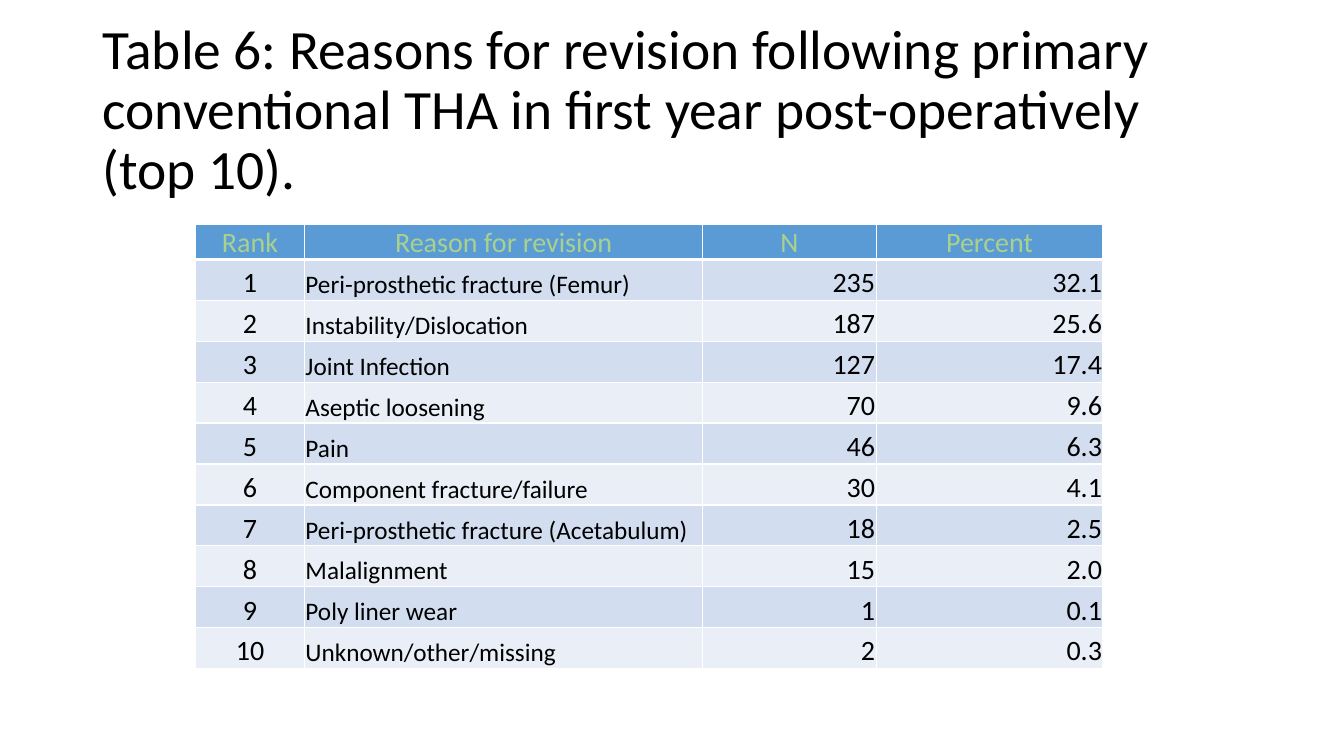
import pptx
import pptx.util
import pptx.dml.color
import pptx.enum.text
import pptx.oxml
import pptx.oxml.ns

Inches, Pt = pptx.util.Inches, pptx.util.Pt
ALIGN, ANCHOR = pptx.enum.text.PP_ALIGN, pptx.enum.text.MSO_ANCHOR

TITLE = ("Table 6: Reasons for revision following primary conventional THA "
         "in first year post-operatively (top 10).")
HEADER = ("Rank", "Reason for revision", "N", "Percent")
REASONS = [
    ("Peri-prosthetic fracture (Femur)", "235", "32.1"),
    ("Instability/Dislocation", "187", "25.6"),
    ("Joint Infection", "127", "17.4"),
    ("Aseptic loosening", "70", "9.6"),
    ("Pain", "46", "6.3"),
    ("Component fracture/failure", "30", "4.1"),
    ("Peri-prosthetic fracture (Acetabulum)", "18", "2.5"),
    ("Malalignment", "15", "2.0"),
    ("Poly liner wear", "1", "0.1"),
    ("Unknown/other/missing", "2", "0.3"),
]
COLUMNS = [
    (1.08, ALIGN.CENTER, "cell"),
    (3.95, ALIGN.LEFT, "reason"),
    (1.72, ALIGN.RIGHT, "cell"),
    (2.25, ALIGN.RIGHT, "cell"),
]
HEADER_HEIGHT, ROW_HEIGHT = 0.34, 0.406
THEME = {
    "font": "Calibri",
    "size": {"title": 39.6, "cell": 20, "reason": 18},
    "text": "000000",
    "header_text": "A9D18E",
    "header_fill": "5B9BD5",
    "bands": ("D2DEEF", "EAEFF7"),
    "border": "FFFFFF",
}


def rgb(value):
    return pptx.dml.color.RGBColor.from_string(value)


def write(tf, text, *, size="cell", color=THEME["text"], align=ALIGN.LEFT, spacing=None):
    p = tf.paragraphs[0]
    p.alignment = align
    p.line_spacing = spacing
    r = p.add_run()
    r.text = text
    r.font.name = THEME["font"]
    r.font.size = Pt(THEME["size"][size])
    r.font.color.rgb = rgb(color)


def set_borders(cell, bottom):
    tc_pr = cell._tc.get_or_add_tcPr()
    widths = {"lnL": 1, "lnR": 1, "lnT": 1, "lnB": bottom}
    for i, (side, width) in enumerate(widths.items()):
        tc_pr.insert(i, pptx.oxml.parse_xml(
            f'<a:{side} {pptx.oxml.ns.nsdecls("a")} w="{Pt(width)}"><a:solidFill>'
            f'<a:srgbClr val="{THEME["border"]}"/></a:solidFill></a:{side}>'))


def add_title(slide):
    sp = slide.shapes.add_textbox(Inches(0.92), Inches(0.68), Inches(11.5), Inches(1.45))
    tf = sp.text_frame
    tf.word_wrap = True
    tf.vertical_anchor = ANCHOR.MIDDLE
    tf.margin_bottom = Inches(0.65)
    write(tf, TITLE, size="title", spacing=0.9)


def add_reasons(slide):
    rows = [HEADER] + [(str(i), *row) for i, row in enumerate(REASONS, 1)]
    height = HEADER_HEIGHT + ROW_HEIGHT * len(REASONS)
    table = slide.shapes.add_table(len(rows), len(COLUMNS), Inches(1.94), Inches(2.23),
                                   Inches(9), Inches(height)).table
    for column, (width, _, _) in zip(table.columns, COLUMNS):
        column.width = Inches(width)
    for y, row in enumerate(rows):
        head = y == 0
        table.rows[y].height = Inches(HEADER_HEIGHT if head else ROW_HEIGHT)
        for x, (text, (_, align, size)) in enumerate(zip(row, COLUMNS)):
            cell = table.cell(y, x)
            cell.margin_left = cell.margin_right = cell.margin_top = Inches(0.01)
            cell.margin_bottom = 0
            cell.vertical_anchor = ANCHOR.BOTTOM
            cell.fill.solid()
            cell.fill.fore_color.rgb = rgb(
                THEME["header_fill"] if head else THEME["bands"][(y - 1) % 2])
            set_borders(cell, 3 if head else 1)
            if head:
                write(cell.text_frame, text, color=THEME["header_text"], align=ALIGN.CENTER)
                cell.text_frame.paragraphs[0].runs[0].font.bold = False
            else:
                write(cell.text_frame, text, size=size, align=align)


def main():
    prs = pptx.Presentation()
    prs.slide_width, prs.slide_height = Inches(13.33), Inches(7.5)
    slide = prs.slides.add_slide(prs.slide_layouts[6])
    add_title(slide)
    add_reasons(slide)
    prs.save("out.pptx")


if __name__ == "__main__":
    main()
